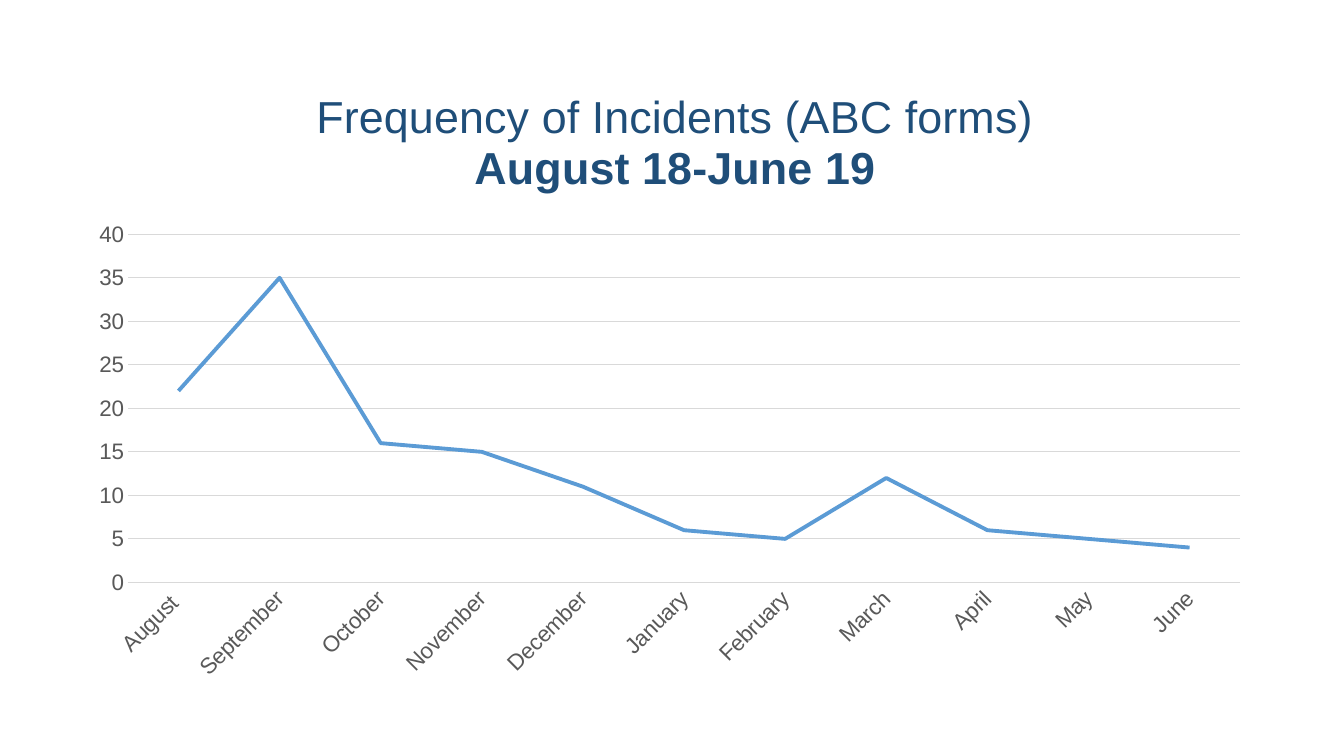
"""Build a slide with a line chart of monthly incidents."""
from dataclasses import dataclass

from lxml import etree
from pptx import Presentation
from pptx import util as u
from pptx.chart import data as chart_data
from pptx.dml.color import RGBColor
from pptx.enum import chart as kinds
from pptx.enum import text
from pptx.oxml import ns

COLORS = {"title": "1F4E79", "label": "595959", "grid": "D9D9D9", "line": "5B9BD5", "base": "000000"}
FONT = "Arial"


@dataclass
class Month:
    name: str
    incidents: int


MONTHS = [
    Month("August ", 22), Month("September", 35), Month("October", 16), Month("November", 15),
    Month("December", 11), Month("January", 6), Month("February", 5), Month("March", 12),
    Month("April", 6), Month("May", 5), Month("June", 4),
]


def color(name: str) -> RGBColor:
    return RGBColor.from_string(COLORS[name])


def style_font(font, size: float, shade: str, bold: bool = False) -> None:
    font.name, font.size, font.bold = FONT, u.Pt(size), bold
    font.color.rgb = color(shade)


def style_line(line, shade: str, width: float) -> None:
    line.color.rgb = color(shade)
    line.width = u.Pt(width)


def write(para, words: str, *, size: float, shade: str, bold: bool = False) -> None:
    para.alignment = text.PP_ALIGN.CENTER
    span = para.add_run()
    span.text = words
    style_font(span.font, size, shade, bold)


def place(parent, index: int, **fractions: float) -> None:
    for old in parent.findall(ns.qn("c:layout")):
        parent.remove(old)
    layout = etree.Element(ns.qn("c:layout"))
    manual = etree.SubElement(layout, ns.qn("c:manualLayout"))
    if "w" in fractions:
        etree.SubElement(manual, ns.qn("c:layoutTarget")).set("val", "inner")
    for side in "xy":
        etree.SubElement(manual, ns.qn(f"c:{side}Mode")).set("val", "edge")
    for side, value in fractions.items():
        etree.SubElement(manual, ns.qn(f"c:{side}")).set("val", str(value))
    parent.insert(index, layout)


def add_incident_chart(page) -> None:
    data = chart_data.CategoryChartData()
    data.categories = [month.name for month in MONTHS]
    data.add_series("Series 1", [month.incidents for month in MONTHS])
    frame = page.shapes.add_chart(
        kinds.XL_CHART_TYPE.LINE, u.Pt(54), u.Pt(58.3), u.Pt(848.9), u.Pt(436.3), data)
    chart = frame.chart
    style_font(chart.font, 16, "base")
    chart.has_legend = False

    box = chart.chart_title.text_frame
    write(box.paragraphs[0], "Frequency of Incidents (ABC forms)", size=32, shade="title")
    write(box.add_paragraph(), "August 18-June 19", size=32, shade="title", bold=True)
    chart.chart_title.include_in_layout = False
    place(chart.element.find(".//" + ns.qn("c:title")), 1, x=0.2, y=0.01)
    place(chart.element.find(".//" + ns.qn("c:plotArea")), 0, x=0.044, y=0.25, w=0.936, h=0.57)

    plot = chart.plots[0]
    plot.vary_by_categories = False
    series = plot.series[0]
    series.smooth = False
    series.marker.style = kinds.XL_MARKER_STYLE.NONE
    style_line(series.format.line, "line", 2.75)

    months, counts = chart.category_axis, chart.value_axis
    for axis in (months, counts):
        axis.major_tick_mark = axis.minor_tick_mark = kinds.XL_TICK_MARK.NONE
        style_font(axis.tick_labels.font, 16, "label")
    style_line(months.format.line, "grid", 0.75)
    label_body = chart.element.find(".//" + ns.qn("c:catAx")).find(".//" + ns.qn("a:bodyPr"))
    label_body.set("rot", "-2700000")
    counts.minimum_scale, counts.maximum_scale, counts.major_unit = 0, 40, 5
    counts.format.line.fill.background()
    style_line(counts.major_gridlines.format.line, "grid", 0.75)


def main() -> None:
    deck = Presentation()
    deck.slide_width, deck.slide_height = u.Pt(960), u.Pt(540)
    page = deck.slides.add_slide(deck.slide_layouts[6])
    page.background.fill.solid()
    page.background.fill.fore_color.rgb = RGBColor.from_string("FFFFFF")
    add_incident_chart(page)
    deck.save("out.pptx")


if __name__ == "__main__":
    main()
